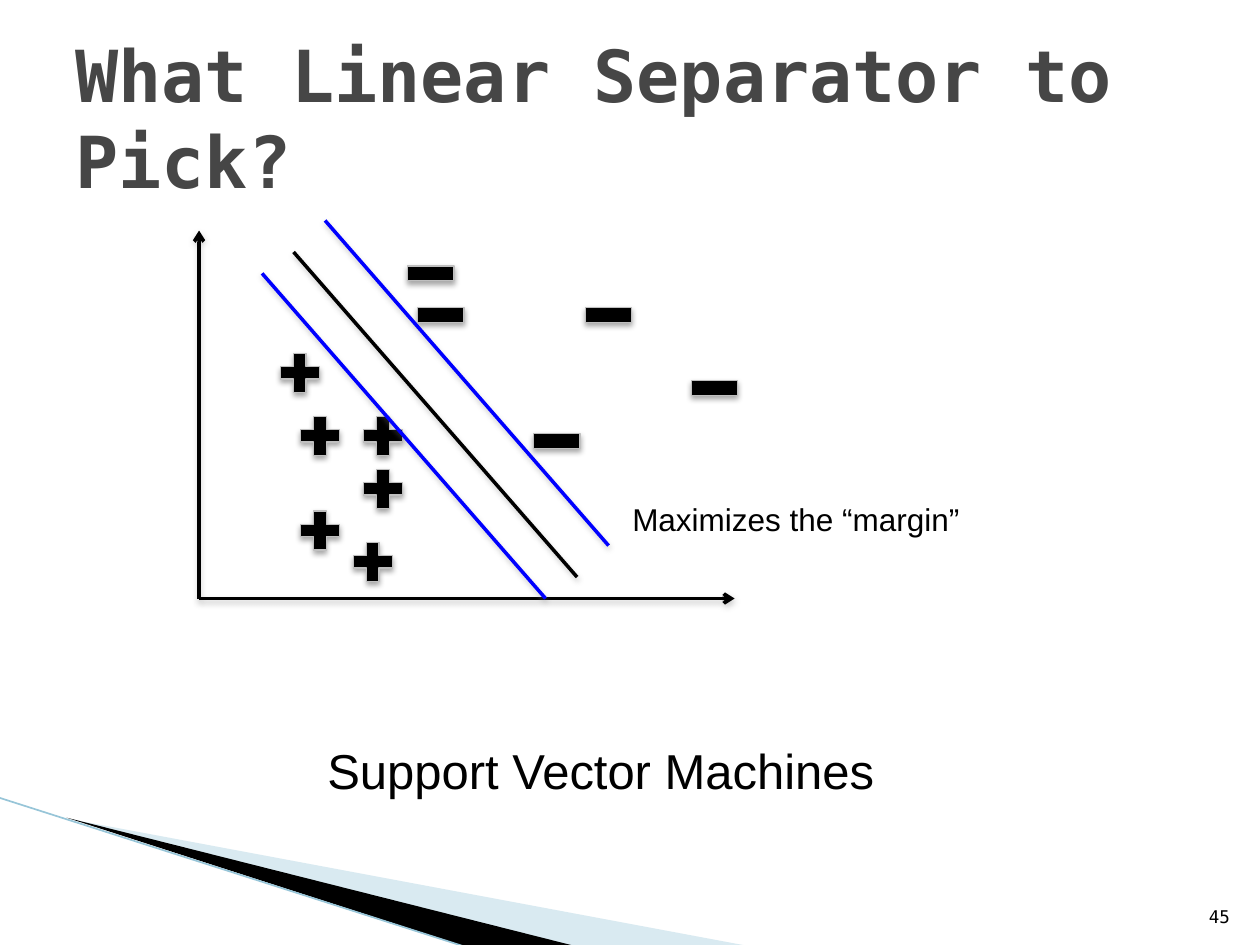
from dataclasses import dataclass

from lxml.etree import SubElement
from pptx import Presentation
from pptx.dml.color import RGBColor
from pptx.enum.shapes import MSO_CONNECTOR, MSO_SHAPE
from pptx.enum.text import MSO_ANCHOR, MSO_AUTO_SIZE, PP_ALIGN
from pptx.oxml.ns import qn
from pptx.slide import Slide
from pptx.util import Inches, Pt

COLORS = {
    "black": "000000",
    "title": "464646",
    "margin": "0000FF",
    "outline": "BFBFBF",
    "line_shadow": "808080",
    "pale_wedge": "A0CBDC",
    "wedge_edge": "97C5D8",
}
HEADING_FONT = "DejaVu Sans Mono"
BODY_FONT = "Arial"


def color(name):
    return RGBColor.from_string(COLORS[name])


def write_text(frame, text, size=18, font=BODY_FONT, fill="black", bold=False,
               align=PP_ALIGN.LEFT, anchor=MSO_ANCHOR.TOP, wrap=True):
    frame.word_wrap = wrap
    frame.auto_size = MSO_AUTO_SIZE.NONE if wrap else MSO_AUTO_SIZE.SHAPE_TO_FIT_TEXT
    frame.vertical_anchor = anchor
    paragraph = frame.paragraphs[0]
    paragraph.alignment = align
    run = paragraph.add_run()
    run.text = text
    run.font.size = Pt(size)
    run.font.name = font
    run.font.bold = bold
    run.font.color.rgb = color(fill)


def set_shadow(properties, name, opacity, distance):
    effects = SubElement(properties, qn("a:effectLst"))
    if name is None:
        return
    shadow = SubElement(effects, qn("a:outerShdw"), blurRad=str(Pt(3.15)),
                        dist=str(Pt(distance)), dir="5400000", rotWithShape="0")
    shade = SubElement(shadow, qn("a:srgbClr"), val=COLORS[name])
    SubElement(shade, qn("a:alpha"), val=str(opacity * 1000))


@dataclass
class Diagram:
    slide: Slide
    line_width: float = 2
    outline_width: float = 0.75

    def text(self, text, left, top, width, height, **style):
        box = self.slide.shapes.add_textbox(
            Inches(left), Inches(top), Inches(width), Inches(height))
        write_text(box.text_frame, text, **style)

    def line(self, start, end, stroke="black", width=None, arrow=False,
             shadow="line_shadow"):
        connector = self.slide.shapes.add_connector(
            MSO_CONNECTOR.STRAIGHT, *map(Inches, (*start, *end)))
        connector.line.color.rgb = color(stroke)
        connector.line.width = Pt(width or self.line_width)
        properties = connector._element.spPr
        if arrow:
            SubElement(properties.find(qn("a:ln")), qn("a:tailEnd"), type="arrow")
        set_shadow(properties, shadow, 38, 1.57)

    def wedge(self, points, fill, opacity=100):
        start, *rest = [(Inches(x), Inches(y)) for x, y in points]
        builder = self.slide.shapes.build_freeform(*start)
        builder.add_line_segments(rest, close=True)
        shape = builder.convert_to_shape()
        shape.shadow.inherit = False
        shape.fill.solid()
        shape.fill.fore_color.rgb = color(fill)
        shape.line.fill.background()
        if opacity < 100:
            shade = shape._element.spPr.find(qn("a:solidFill"))[0]
            SubElement(shade, qn("a:alpha"), val=str(opacity * 1000))

    def sign(self, preset, left, top, size):
        shape = self.slide.shapes.add_shape(
            preset, Inches(left), Inches(top), Inches(size), Inches(size))
        shape.fill.solid()
        shape.fill.fore_color.rgb = color("black")
        shape.line.color.rgb = color("outline")
        shape.line.width = Pt(self.outline_width)
        set_shadow(shape._element.spPr, "black", 35, 1.81)


def main():
    presentation = Presentation()
    presentation.slide_width = Inches(10)
    presentation.slide_height = Inches(7.5)
    diagram = Diagram(presentation.slides.add_slide(presentation.slide_layouts[6]))

    diagram.wedge([(0.55, 6.5), (5.95, 7.51), (4.56, 7.51)], "pale_wedge", opacity=40)
    diagram.wedge([(0.53, 6.49), (4.57, 7.51), (3.72, 7.52)], "black")
    diagram.line((-0.01, 6.33), (3.71, 7.52), "wedge_edge", width=0.95, shadow=None)

    diagram.text("What Linear Separator to Pick?", 0.5, 0.3, 9, 1.25, size=41,
                 font=HEADING_FONT, fill="title", bold=True, anchor=MSO_ANCHOR.MIDDLE)

    origin = (1.58, 4.75)
    for axis_end in [(1.58, 1.83), (5.83, 4.75)]:
        diagram.line(origin, axis_end, arrow=True)

    positives = [(2.17, 2.75), (2.33, 3.25), (2.83, 3.25),
                 (2.33, 4), (2.83, 3.67), (2.75, 4.25)]
    negatives = [(4.17, 3.25), (5.42, 2.83), (4.58, 2.25), (3.25, 2.25), (3.17, 1.92)]
    for preset, size, places in [(MSO_SHAPE.MATH_PLUS, 0.42, positives),
                                 (MSO_SHAPE.MATH_MINUS, 0.5, negatives)]:
        for left, top in places:
            diagram.sign(preset, left, top, size)

    run, drop = 2.25, 2.58
    for x, y, stroke in [(2.33, 2, "black"), (2.58, 1.75, "margin"),
                         (2.08, 2.17, "margin")]:
        diagram.line((x, y), (x + run, y + drop), stroke)

    diagram.text("Maximizes the “margin”", 4.92, 3.92, 2.83, 0.4, wrap=False)
    diagram.text("Support Vector Machines", 2.5, 5.83, 4.59, 0.57, size=28, wrap=False)
    diagram.text("45", 9.46, 7.01, 0.4, 0.4, size=10, font=HEADING_FONT,
                 align=PP_ALIGN.RIGHT, anchor=MSO_ANCHOR.BOTTOM)

    presentation.save("out.pptx")


if __name__ == "__main__":
    main()
